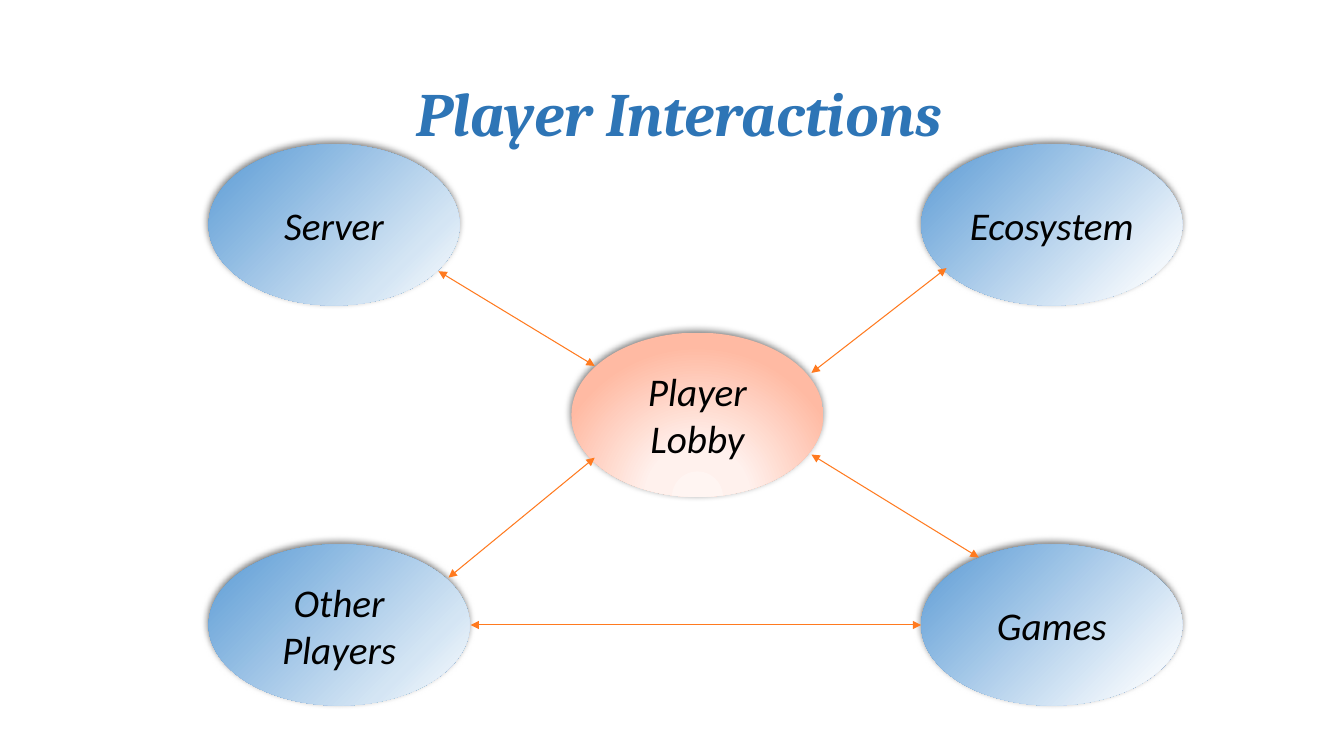
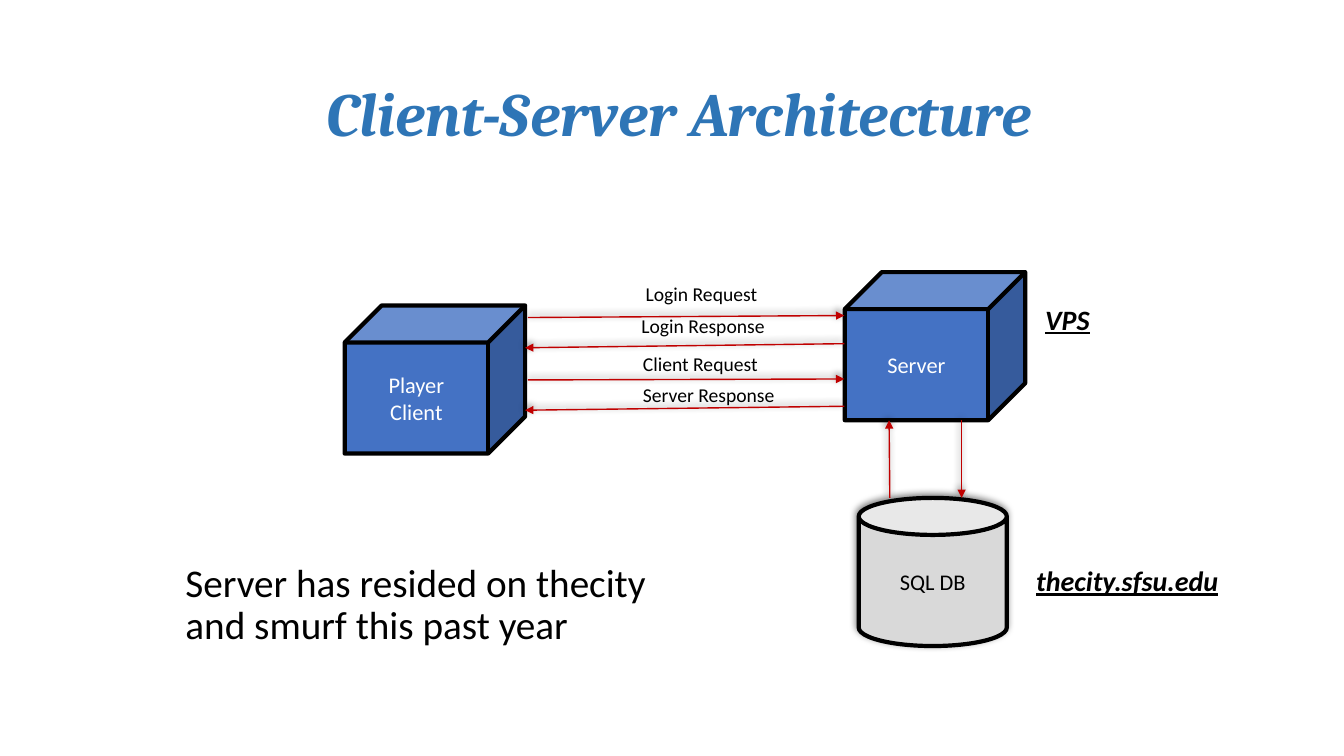
import pptx
import pptx.dml.color
import pptx.enum.shapes
import pptx.enum.text
import pptx.oxml.ns
import pptx.util
from lxml import etree

Pt = pptx.util.Pt
RGBColor = pptx.dml.color.RGBColor
Shape = pptx.enum.shapes.MSO_SHAPE
Align = pptx.enum.text.PP_ALIGN
Anchor = pptx.enum.text.MSO_ANCHOR
qn = pptx.oxml.ns.qn

BLACK = RGBColor(0x00, 0x00, 0x00)
WHITE = RGBColor(0xFF, 0xFF, 0xFF)
TITLE_BLUE = RGBColor(0x2E, 0x75, 0xB6)
CUBE_BLUE = RGBColor(0x44, 0x72, 0xC4)
STORE_GRAY = RGBColor(0xD9, 0xD9, 0xD9)
ORANGE = RGBColor(0xFF, 0x7A, 0x1F)
RED = RGBColor(0xC0, 0x00, 0x00)
SKY = RGBColor(0x5B, 0x9B, 0xD5)
PALE_SKY = RGBColor(0xD4, 0xE5, 0xF4)
ICE = RGBColor(0xF2, 0xF7, 0xFC)
PEACH = RGBColor(0xFF, 0xBA, 0xA3)
PALE_PEACH = RGBColor(0xFF, 0xF1, 0xED)
BLUSH = RGBColor(0xFF, 0xF5, 0xF2)

TITLE_FONT = "Cambria"
BODY_FONT = "Calibri"
TITLE_BOX = (76.3, 27.4, 817.9, 104.4)

CORNER = (100, 100, 0, 0)
BELOW = (50, 155, 50, -55)
SOFT = ((0, WHITE), (24, PALE_SKY), (100, SKY))
BRIGHT = ((0, WHITE), (14, ICE), (100, SKY))
WARM = ((0, BLUSH), (34, PALE_PEACH), (100, PEACH))


def points(*lengths):
    """Turn numbers into point lengths."""
    return [Pt(length) for length in lengths]


def place(item, box):
    """Move a placeholder to a box."""
    item.left, item.top, item.width, item.height = points(*box)


def write(frame, lines, size, color=BLACK, align=Align.LEFT, face=BODY_FONT,
          bold=False, italic=False, underline=False):
    """Write one styled paragraph per line."""
    frame.word_wrap = True
    for index, line in enumerate(lines):
        para = frame.add_paragraph() if index else frame.paragraphs[0]
        para.alignment = align
        span = para.add_run()
        span.text = line
        font = span.font
        font.name, font.size, font.color.rgb = face, Pt(size), color
        font.bold, font.italic, font.underline = bold, italic, underline


def add_child(parent, tag, **attributes):
    """Append a drawing element with attributes."""
    child = etree.SubElement(parent, qn("a:" + tag))
    for name, value in attributes.items():
        child.set(name, str(value))
    return child


def cast_shadow(effects):
    """Fill an effect list with the deck's soft shadow."""
    shadow = add_child(effects, "outerShdw", blurRad=Pt(5), dist=Pt(2),
                       dir=245 * 60000, algn="ctr", rotWithShape=0)
    tint = add_child(shadow, "srgbClr", val=BLACK)
    add_child(tint, "alpha", val=50000)


def add_gradient(shape, stops, focus):
    """Give a shape a circular gradient around a focus rectangle."""
    shape.fill.background()
    properties = shape._element.spPr
    gradient = etree.Element(qn("a:gradFill"), rotWithShape="1")
    properties.replace(properties.find(qn("a:noFill")), gradient)
    stop_list = add_child(gradient, "gsLst")
    for position, color in stops:
        stop = add_child(stop_list, "gs", pos=position * 1000)
        add_child(stop, "srgbClr", val=color)
    circle = add_child(gradient, "path", path="circle")
    sides = {side: share * 1000 for side, share in zip("ltrb", focus)}
    add_child(circle, "fillToRect", **sides)


def add_arrow(page, start, end, color, width, double=False, shadow=False):
    """Draw a straight arrow between two points."""
    line = page.shapes.add_connector(
        pptx.enum.shapes.MSO_CONNECTOR.STRAIGHT, *points(*start, *end))
    line.line.color.rgb = color
    line.line.width = Pt(width)
    properties = line._element.spPr
    stroke = properties.find(qn("a:ln"))
    if double:
        add_child(stroke, "headEnd", type="triangle")
    add_child(stroke, "tailEnd", type="triangle")
    effects = add_child(properties, "effectLst")
    if shadow:
        cast_shadow(effects)


def add_figure(page, kind, box, lines, size, color, shadow=False, italic=False):
    """Draw a preset shape with centred text."""
    shape = page.shapes.add_shape(kind, *points(*box))
    shape.shadow.inherit = False
    if shadow:
        cast_shadow(shape._element.spPr.find(qn("a:effectLst")))
    shape.text_frame.vertical_anchor = Anchor.MIDDLE
    write(shape.text_frame, lines, size, color, Align.CENTER, italic=italic)
    return shape


def add_bubble(page, box, lines, stops, focus=CORNER):
    """Draw a shaded ellipse."""
    bubble = add_figure(page, Shape.OVAL, box, lines, 28, BLACK, True, True)
    add_gradient(bubble, stops, focus)
    bubble.line.fill.background()


def add_solid(page, kind, box, lines, fill, color, shadow=False):
    """Draw a filled solid with a heavy outline."""
    solid = add_figure(page, kind, box, lines, 16, color, shadow)
    solid.fill.solid()
    solid.fill.fore_color.rgb = fill
    solid.line.color.rgb = BLACK
    solid.line.width = Pt(3)


def add_label(page, box, text, size, strong=False):
    """Add a text label, underlined bold italic if strong."""
    label = page.shapes.add_textbox(*points(*box))
    write(label.text_frame, [text], size, bold=strong, italic=strong,
          underline=strong)


def add_page(deck, layout, title):
    """Add a slide with the shared title style."""
    page = deck.slides.add_slide(deck.slide_layouts[layout])
    place(page.shapes.title, TITLE_BOX)
    frame = page.shapes.title.text_frame
    frame.auto_size = pptx.enum.text.MSO_AUTO_SIZE.NONE
    frame.vertical_anchor = Anchor.MIDDLE
    write(frame, [title], 44, TITLE_BLUE, Align.CENTER, TITLE_FONT, True, True)
    return page


def add_network(page, left, top):
    """Draw the lobby, its four neighbours and their links."""
    add_bubble(page, (left + 259.2, top + 134.6, 180, 117.4),
               ["Player", "Lobby"], WARM, BELOW)
    far, low = left + 509, top + 285.8
    for x, y, width, lines, stops in (
            (left, top, 179.3, ["Server"], SOFT),
            (far, top, 186.5, ["Ecosystem"], BRIGHT),
            (left, low, 186.5, ["Other", "Players"], SOFT),
            (far, low, 186.5, ["Games"], BRIGHT)):
        add_bubble(page, (x, y, width, 115.2), lines, stops)
    for x1, y1, x2, y2 in (
            (164.2, 90.7, 275.8, 158.4),
            (187.2, 343.4, 509, 343.4),
            (171.4, 309.6, 275.8, 223.9),
            (430.6, 221.7, 550.1, 295.2),
            (430.6, 163.4, 527.1, 88.5)):
        add_arrow(page, (left + x1, top + y1), (left + x2, top + y2),
                  ORANGE, 0.75, double=True)


def add_messages(page, left, top, width):
    """Draw the labelled requests and responses."""
    right = left + width
    for text, shift, label_top, start, end, reply in (
            ("Login Request", 79, 0, 28.8, 27.4, False),
            ("Login Response", 76, 23, 47.5, 50.4, True),
            ("Client Request", 77, 49.7, 73.4, 72.7, False),
            ("Server Response", 77, 72, 92.2, 95, True)):
        ends = (right, left) if reply else (left + 2, right)
        add_arrow(page, (ends[0], top + start), (ends[1], top + end),
                  RED, 1, shadow=True)
        add_label(page, (left + shift, top + label_top, 113, 24.5), text, 14)


def add_backend(page, left, top):
    """Draw the server above its database with host names."""
    add_solid(page, Shape.CUBE, (left, top, 128.9, 105.8), ["Server"],
              CUBE_BLUE, WHITE)
    add_solid(page, Shape.CAN, (left + 10, top + 161.3, 105.8, 105.8),
              ["SQL DB"], STORE_GRAY, BLACK, True)
    upper, lower = top + 105.8, top + 161.3
    add_arrow(page, (left + 83.5, upper), (left + 83.5, lower), RED, 1,
              shadow=True)
    add_arrow(page, (left + 32.2, lower), (left + 31.7, upper), RED, 1,
              shadow=True)
    add_label(page, (left + 136, top + 18, 66.2, 39.6), "VPS", 20, True)
    add_label(page, (left + 129.6, top + 204.5, 159.8, 39.6),
              "thecity.sfsu.edu", 20, True)


def add_remark(page, box):
    """Write the closing remark in the body placeholder."""
    body = page.placeholders[1]
    place(body, box)
    frame = body.text_frame
    frame.auto_size = pptx.enum.text.MSO_AUTO_SIZE.NONE
    para = frame.paragraphs[0]
    para.line_spacing = 0.9
    para.space_before = Pt(0)
    settings = para._p.get_or_add_pPr()
    settings.set("marL", "0")
    settings.set("indent", "0")
    add_child(settings, "buNone")
    write(frame, ["Server has resided on thecity and smurf this past year"], 28)


def add_interactions(deck):
    """Build the player interactions slide."""
    page = add_page(deck, 5, "Player Interactions")
    add_network(page, 149, 103)


def add_architecture(deck):
    """Build the client-server slide."""
    page = add_page(deck, 1, "Client-Server Architecture")
    add_backend(page, 603.4, 194.4)
    add_solid(page, Shape.CUBE, (246.2, 218.2, 128.9, 105.8),
              ["Player", "Client"], CUBE_BLUE, WHITE)
    add_messages(page, 375.1, 198, 228)
    add_remark(page, (125.3, 398.9, 366.5, 89.3))


def main():
    """Build and save the deck."""
    deck = pptx.Presentation()
    deck.slide_width, deck.slide_height = points(960, 540)
    add_interactions(deck)
    add_architecture(deck)
    deck.save("out.pptx")


if __name__ == "__main__":
    main()
